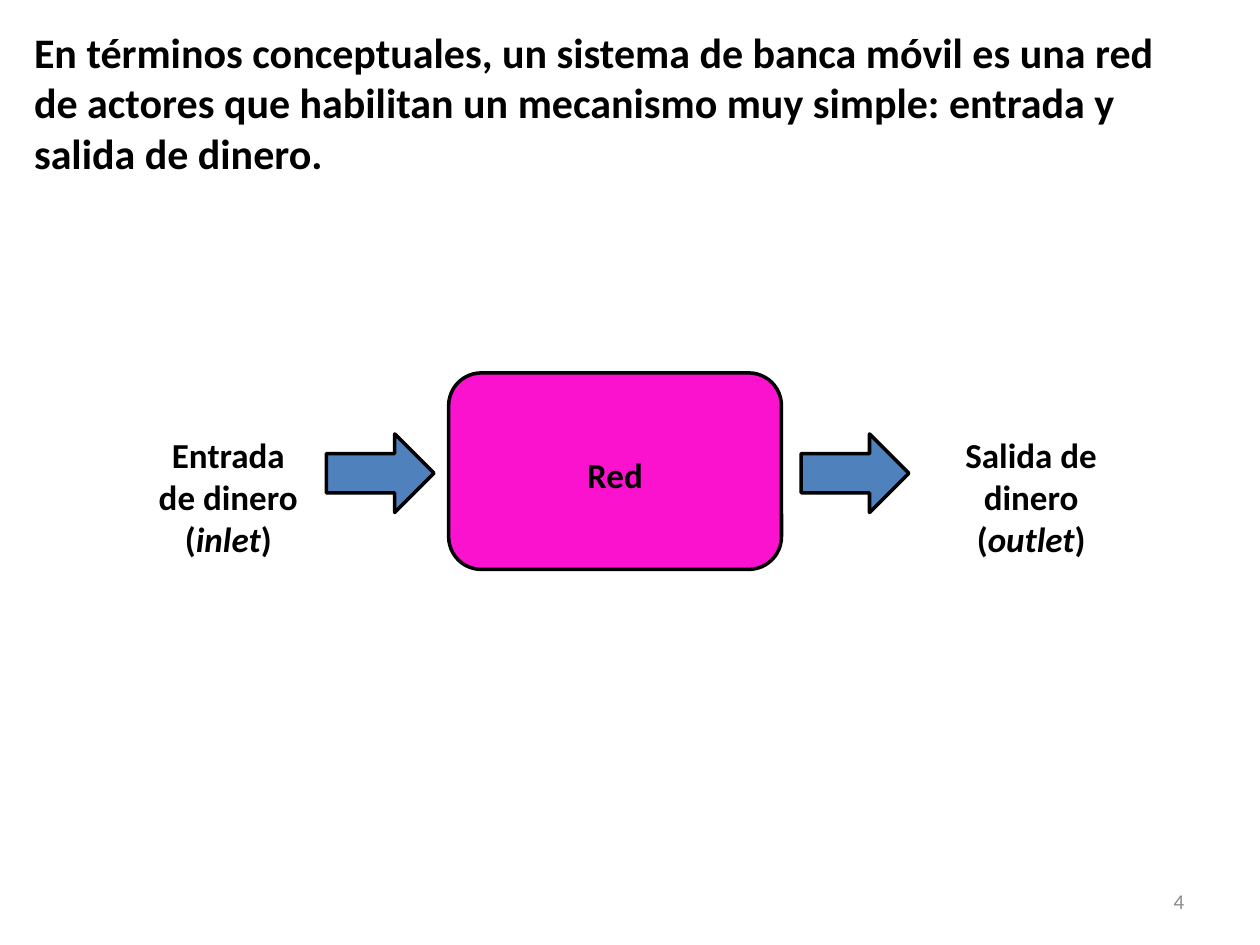
import dataclasses
import pptx
import pptx.dml.color
import pptx.enum.shapes
import pptx.enum.text
import pptx.util

SHAPES = pptx.enum.shapes.MSO_SHAPE
ALIGN = pptx.enum.text.PP_ALIGN
ANCHOR = pptx.enum.text.MSO_ANCHOR


@dataclasses.dataclass(frozen=True)
class Theme:
    font: str = "Calibri"
    ink: str = "000000"
    muted: str = "8C8C8C"
    network: str = "FA12CE"
    arrow: str = "4F81BD"
    title_size: int = 24
    label_size: int = 20
    number_size: int = 12
    outline: int = 2


@dataclasses.dataclass(frozen=True)
class Box:
    left: float
    top: float
    width: float
    height: float

    def share(self, left, top, width, height):
        return Box(self.left + left * self.width, self.top + top * self.height,
                   width * self.width, height * self.height)

    def emu(self):
        return [pptx.util.Inches(length) for length in
                (self.left, self.top, self.width, self.height)]


THEME = Theme()
SLIDE = Box(0, 0, 10, 7.5)


def color(value):
    return pptx.dml.color.RGBColor.from_string(value)


def write(shape, paragraphs, size, ink=THEME.ink, bold=True,
          align=ALIGN.CENTER, anchor=ANCHOR.TOP):
    frame = shape.text_frame
    frame.word_wrap = True
    frame.auto_size = pptx.enum.text.MSO_AUTO_SIZE.NONE
    frame.vertical_anchor = anchor
    frame.margin_left = frame.margin_right = 0
    frame.margin_top = frame.margin_bottom = 0
    for index, pieces in enumerate(paragraphs):
        para = frame.add_paragraph() if index else frame.paragraphs[0]
        para.alignment = align
        for text, italic in pieces:
            span = para.add_run()
            span.text = text
            span.font.name = THEME.font
            span.font.size = pptx.util.Pt(size)
            span.font.bold = bold
            span.font.italic = italic
            span.font.color.rgb = color(ink)


def add_label(page, box, paragraphs):
    write(page.shapes.add_textbox(*box.emu()), paragraphs, THEME.label_size)


def add_outlined(page, kind, box, fill):
    shape = page.shapes.add_shape(kind, *box.emu())
    shape.shadow.inherit = False
    shape.fill.solid()
    shape.fill.fore_color.rgb = color(fill)
    shape.line.color.rgb = color(THEME.ink)
    shape.line.width = pptx.util.Pt(THEME.outline)


def add_title(page, box, text):
    title = page.shapes.title
    title.left, title.top, title.width, title.height = box.emu()
    write(title, [[(text, False)]], THEME.title_size, align=ALIGN.LEFT)


def add_flow(page, box):
    add_outlined(page, SHAPES.ROUNDED_RECTANGLE,
                 box.share(0.3, 0, 0.34, 1), THEME.network)
    add_label(page, box.share(0.395, 0.41, 0.15, 0.22), [[("Red", False)]])
    for left in (0.175, 0.66):
        add_outlined(page, SHAPES.RIGHT_ARROW,
                     box.share(left, 0.31, 0.11, 0.4), THEME.arrow)
    ends = [(0, 0.15, "Entrada de dinero", "inlet"),
            (0.79, 0.21, "Salida de dinero", "outlet")]
    for left, width, text, term in ends:
        add_label(page, box.share(left, 0.31, width, 0.65),
                  [[(text, False)], [("(", False), (term, True), (")", False)]])


def add_page_number(page, box, number):
    write(page.shapes.add_textbox(*box.emu()), [[(number, False)]],
          THEME.number_size, THEME.muted, False, ALIGN.RIGHT, ANCHOR.MIDDLE)


def main():
    deck = pptx.Presentation()
    deck.slide_width = pptx.util.Inches(SLIDE.width)
    deck.slide_height = pptx.util.Inches(SLIDE.height)
    page = deck.slides.add_slide(deck.slide_layouts.get_by_name("Title Only"))
    add_title(page, Box(0.27, 0.21, 8.95, 1.21),
              "En términos conceptuales, un sistema de banca móvil es una red "
              "de actores que habilitan un mecanismo muy simple: entrada y "
              "salida de dinero.")
    add_flow(page, Box(1.23, 2.96, 7.77, 1.56))
    add_page_number(page, Box(7.17, 6.95, 2.23, 0.4), "4")
    deck.save("out.pptx")


if __name__ == "__main__":
    main()
